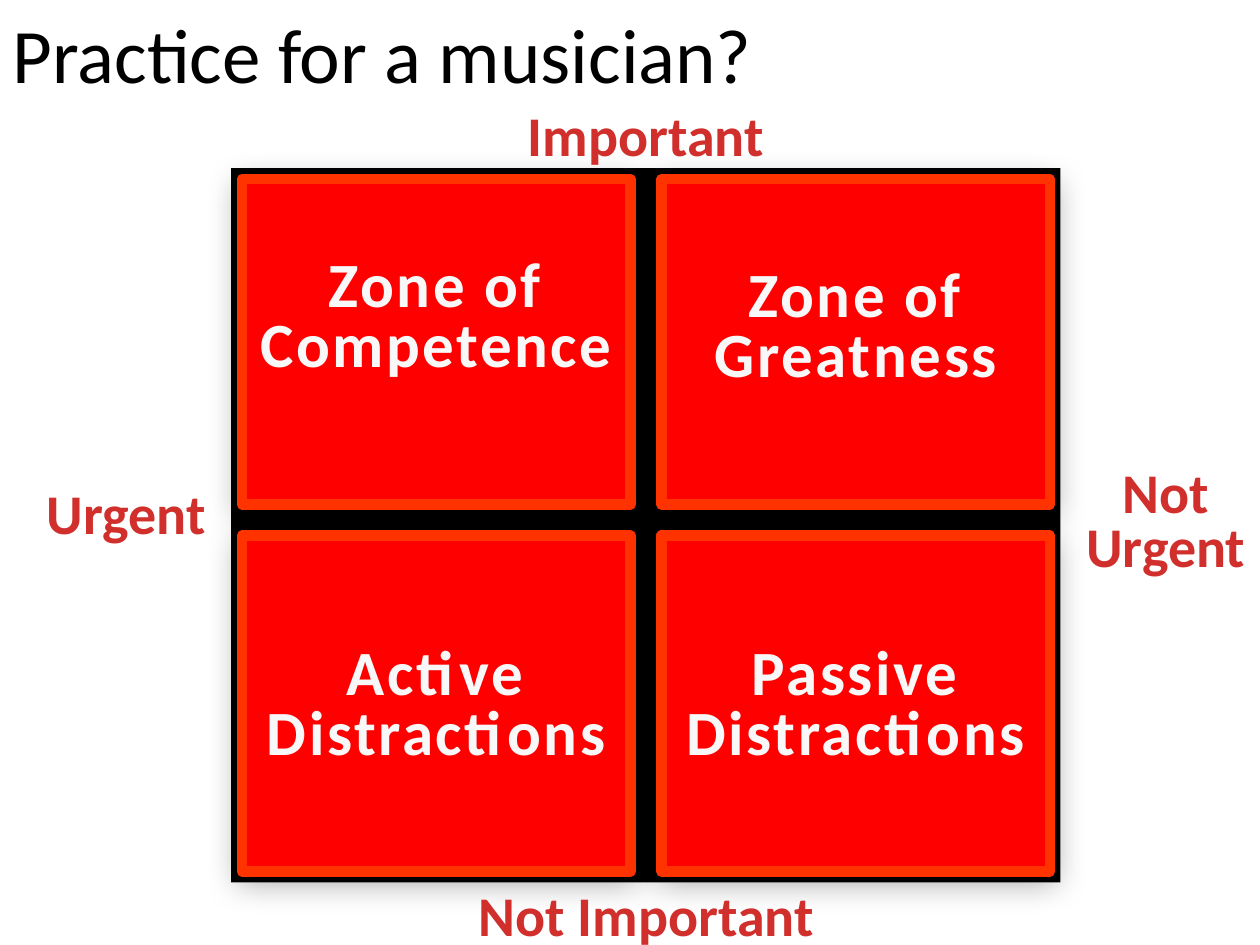
from lxml import etree
from pptx import Presentation
from pptx import util as u
from pptx.dml.color import RGBColor
from pptx.enum import shapes, text
from pptx.oxml import ns

LABEL = dict(name="Calibri", size=u.Pt(32), bold=True)
ZONE = dict(name="Calibri", size=u.Pt(36), bold=True)
TITLE = dict(name="Calibri", size=u.Pt(44), bold=False)


def colour(value):
    return RGBColor.from_string(value)


def lengths(box):
    return [u.Cm(value) for value in box]


def write(shape, lines, font_format, font_colour, align, line_spacing=1.0, tracking=None):
    frame = shape.text_frame
    frame.word_wrap = True
    frame.auto_size = text.MSO_AUTO_SIZE.NONE
    frame.vertical_anchor = text.MSO_ANCHOR.TOP
    frame.text = "\n".join(lines)
    for paragraph in frame.paragraphs:
        paragraph.alignment = align
        paragraph.line_spacing = line_spacing
        run = paragraph.runs[0]
        for name, value in font_format.items():
            setattr(run.font, name, value)
        run.font.color.rgb = colour(font_colour)
        if tracking:
            run.font._element.set("spc", str(tracking))


def add_rectangle(slide, box, fill):
    shape = slide.shapes.add_shape(shapes.MSO_SHAPE.RECTANGLE, *lengths(box))
    shape.shadow.inherit = False
    shape.fill.solid()
    shape.fill.fore_color.rgb = colour(fill)
    shape.line.fill.background()
    return shape


def add_soft_shadow(shape):
    effects = shape._element.spPr.find(ns.qn("a:effectLst"))
    shadow = etree.SubElement(effects, ns.qn("a:outerShdw"), blurRad=str(u.Pt(17.8)),
                              dist=str(u.Pt(4)), dir=str(87 * 60000), rotWithShape="0")
    black = etree.SubElement(shadow, ns.qn("a:srgbClr"), val="000000")
    etree.SubElement(black, ns.qn("a:alpha"), val="33000")


def add_title(slide, box):
    title = slide.shapes.title
    title.left, title.top, title.width, title.height = lengths(box)
    write(title, ["Practice for a musician?"], TITLE, "000000", text.PP_ALIGN.LEFT)


def add_zone(slide, box, caption, caption_top):
    left, top, width, height = box
    zone = add_rectangle(slide, box, "FF0000")
    zone.line.color.rgb = colour("FF3300")
    zone.line.width = u.Pt(6)
    add_soft_shadow(zone)
    label = slide.shapes.add_textbox(*lengths((left, top + caption_top, width, 2.74)))
    write(label, [caption], ZONE, "F8F8F8", text.PP_ALIGN.CENTER, 0.8, 150)


def add_matrix(slide, box):
    left, top, width, height = box
    add_rectangle(slide, box, "000000")
    columns = [0.22, 8.68]
    rows = [(0.22, 6.56), (7.41, 6.77)]
    captions = [
        [("Zone of Competence", 1.48), ("Zone of Greatness", 1.69)],
        [("Active Distractions", 2.12), ("Passive Distractions", 2.12)],
    ]
    for (row_top, row_height), row in zip(rows, captions):
        for column_left, (caption, caption_top) in zip(columns, row):
            zone_box = (left + column_left, top + row_top, 7.83, row_height)
            add_zone(slide, zone_box, caption, caption_top)


def add_axis_labels(slide, box):
    left, top, width, height = box
    labels = [
        (["Urgent"], (-4.02, 6.14, 3.81, 1.62), 1.0),
        (["Not", "Urgent"], (16.94, 5.98, 3.81, 2.46), 0.8),
        (["Important"], (5.72, -1.48, 5.28, 1.62), 1.0),
        (["Not Important"], (4.24, 14.24, 8.26, 1.62), 1.0),
    ]
    for lines, (x, y, label_width, label_height), spacing in labels:
        label = slide.shapes.add_textbox(
            *lengths((left + x, top + y, label_width, label_height)))
        write(label, lines, LABEL, "D02F2C", text.PP_ALIGN.CENTER, spacing)


def main():
    presentation = Presentation()
    presentation.slide_width, presentation.slide_height = lengths((25.4, 19.05))
    slide = presentation.slides.add_slide(presentation.slide_layouts[5])
    matrix_box = (4.66, 3.39, 16.72, 14.4)
    add_title(slide, (0, 0, 25.4, 2.13))
    add_matrix(slide, matrix_box)
    add_axis_labels(slide, matrix_box)
    presentation.save("out.pptx")


if __name__ == "__main__":
    main()
